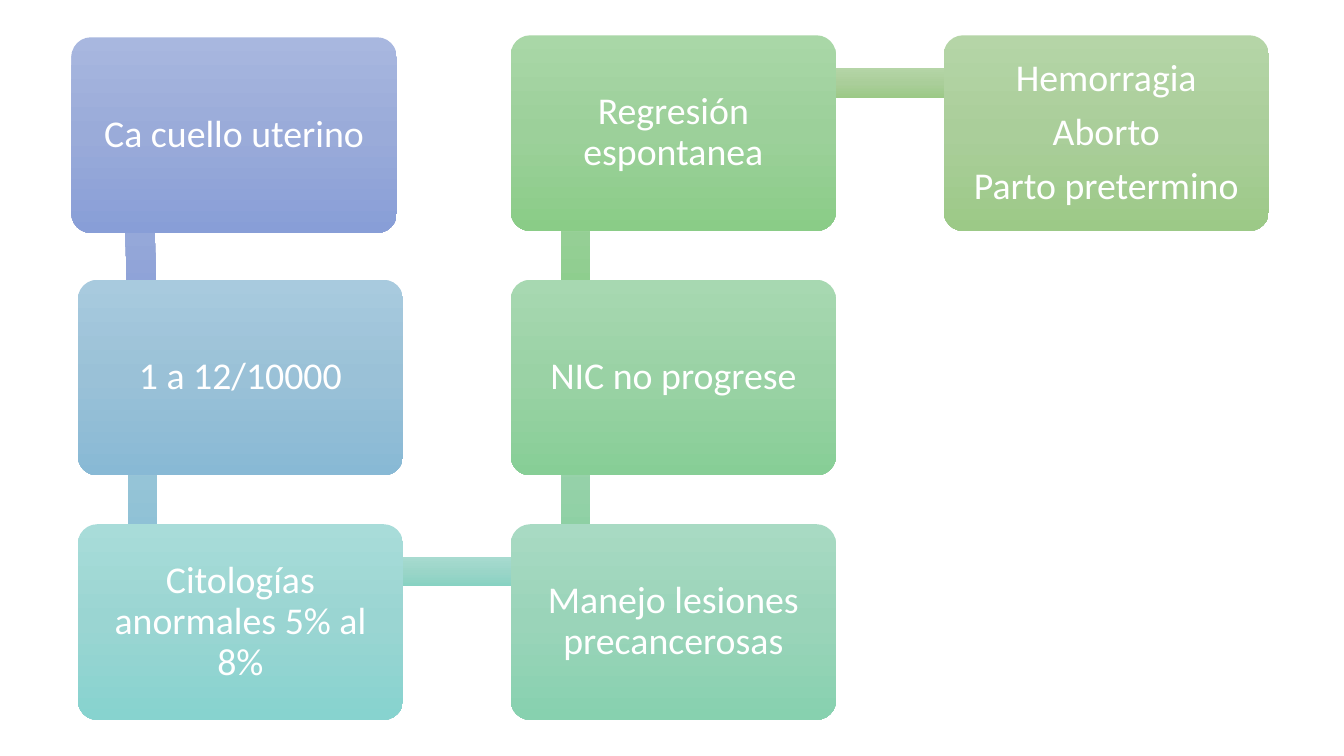
import copy
import math

import pptx
import pptx.dml.color
import pptx.enum.shapes
import pptx.enum.text
import pptx.util

Cm = pptx.util.Cm
Pt = pptx.util.Pt

# Each gradient runs from top to bottom
COLOURS = {
    "text": "FFFFFF",
    "indigo": ("A8B7DF", "9AABD9", "889ED7"),
    "sky": ("A8CADE", "9AC1D7", "88B9D5"),
    "sky bar": ("A8CEDD", "9AC5D7", "88BFD5"),
    "turquoise": ("A8DCD9", "9AD5D2", "87D3CF"),
    "turquoise bar": ("A8DBD0", "9AD5C8", "87D2C2"),
    "mint": ("A8DAC3", "9AD4B9", "87D1AF"),
    "mint bar": ("A7D9B8", "9AD2AC", "87CF9F"),
    "green": ("A7D8B1", "9AD2A5", "87CE96"),
    "green bar": ("A7D7A7", "9AD09A", "87CC87"),
    "leaf": ("A9D7A7", "9CD09A", "8ACC87"),
    "olive": ("B5D5A7", "AACE9A", "9CC987"),
}

BOX_WIDTH, BOX_HEIGHT = 8.2, 4.93
COLUMN_LEFT, COLUMN_PITCH = 1.96, 10.91
ROW_TOP, ROW_PITCH = 0.89, 6.16
ANCHOR_X, ANCHOR_Y = 1.63, 1.2
BAR_THICKNESS = 0.74


def cell(column, row):
    """Return the left and top of a box in the grid, in centimetres."""
    return COLUMN_LEFT + column * COLUMN_PITCH, ROW_TOP + row * ROW_PITCH


# Position, box colour, colour of the bar to the next box, paragraphs
STEPS = [
    ((1.8, 0.94), "indigo", "indigo", ["Ca cuello uterino"]),
    (cell(0, 1), "sky", "sky bar", ["1 a 12/10000"]),
    (cell(0, 2), "turquoise", "turquoise bar", ["Citologías anormales 5% al 8%"]),
    (cell(1, 2), "mint", "mint bar", ["Manejo lesiones precancerosas"]),
    (cell(1, 1), "green", "green bar", ["NIC no progrese"]),
    (cell(1, 0), "leaf", "olive", ["Regresión espontanea"]),
    (cell(2, 0), "olive", None, ["Hemorragia", "Aborto", "Parto pretermino"]),
]


class SlideBuilder:
    font_name = "Calibri"
    font_size = Pt(27)

    def __init__(self, slide):
        self.slide = slide

    def add_gradient_shape(self, kind, left, top, width, height, colour):
        shape = self.slide.shapes.add_shape(
            kind, Cm(left), Cm(top), Cm(width), Cm(height))
        shape.shadow.inherit = False
        shape.line.fill.background()
        shape.fill.gradient()
        shape.fill.gradient_angle = 270
        gradient = shape._element.spPr.find(pptx.oxml.ns.qn("a:gradFill"))
        gradient.set("rotWithShape", "0")
        first_stop = gradient.gsLst[0]
        first_stop.addnext(copy.deepcopy(first_stop))
        stops = shape.fill.gradient_stops
        for stop, position, value in zip(stops, (0, 0.5, 1), COLOURS[colour]):
            stop.position = position
            stop.color.rgb = pptx.dml.color.RGBColor.from_string(value)
        return shape

    def add_bar(self, start, end, colour):
        """Lay a bar between the anchor points of two boxes."""
        across, down = end[0] - start[0], end[1] - start[1]
        length = math.hypot(across, down) - 0.05
        centre_x = (start[0] + end[0]) / 2 + ANCHOR_X
        centre_y = (start[1] + end[1]) / 2 + ANCHOR_Y
        bar = self.add_gradient_shape(
            pptx.enum.shapes.MSO_SHAPE.RECTANGLE,
            centre_x - length / 2, centre_y - BAR_THICKNESS / 2,
            length, BAR_THICKNESS, colour)
        bar.rotation = math.degrees(math.atan2(down, across)) % 360

    def add_box(self, position, colour, lines):
        box = self.add_gradient_shape(
            pptx.enum.shapes.MSO_SHAPE.ROUNDED_RECTANGLE,
            *position, BOX_WIDTH, BOX_HEIGHT, colour)
        box.adjustments[0] = 0.1
        frame = box.text_frame
        frame.word_wrap = True
        frame.vertical_anchor = pptx.enum.text.MSO_ANCHOR.MIDDLE
        frame.margin_left = frame.margin_right = Cm(0.43)
        frame.margin_top = frame.margin_bottom = Cm(0.43)
        for index, line in enumerate(lines):
            paragraph = frame.add_paragraph() if index else frame.paragraphs[0]
            paragraph.alignment = pptx.enum.text.PP_ALIGN.CENTER
            paragraph.line_spacing = 0.9
            paragraph.space_after = Pt(9.5)
            run = paragraph.add_run()
            run.text = line
            run.font.name = self.font_name
            run.font.size = self.font_size
            run.font.color.rgb = pptx.dml.color.RGBColor.from_string(COLOURS["text"])


def main():
    presentation = pptx.Presentation()
    presentation.slide_width = Cm(33.87)
    presentation.slide_height = Cm(19.05)
    blank_layout = presentation.slide_layouts[6]
    builder = SlideBuilder(presentation.slides.add_slide(blank_layout))
    for step, following in zip(STEPS, STEPS[1:]):
        builder.add_bar(step[0], following[0], step[2])
    for position, colour, _, lines in STEPS:
        builder.add_box(position, colour, lines)
    presentation.save("out.pptx")


if __name__ == "__main__":
    main()
